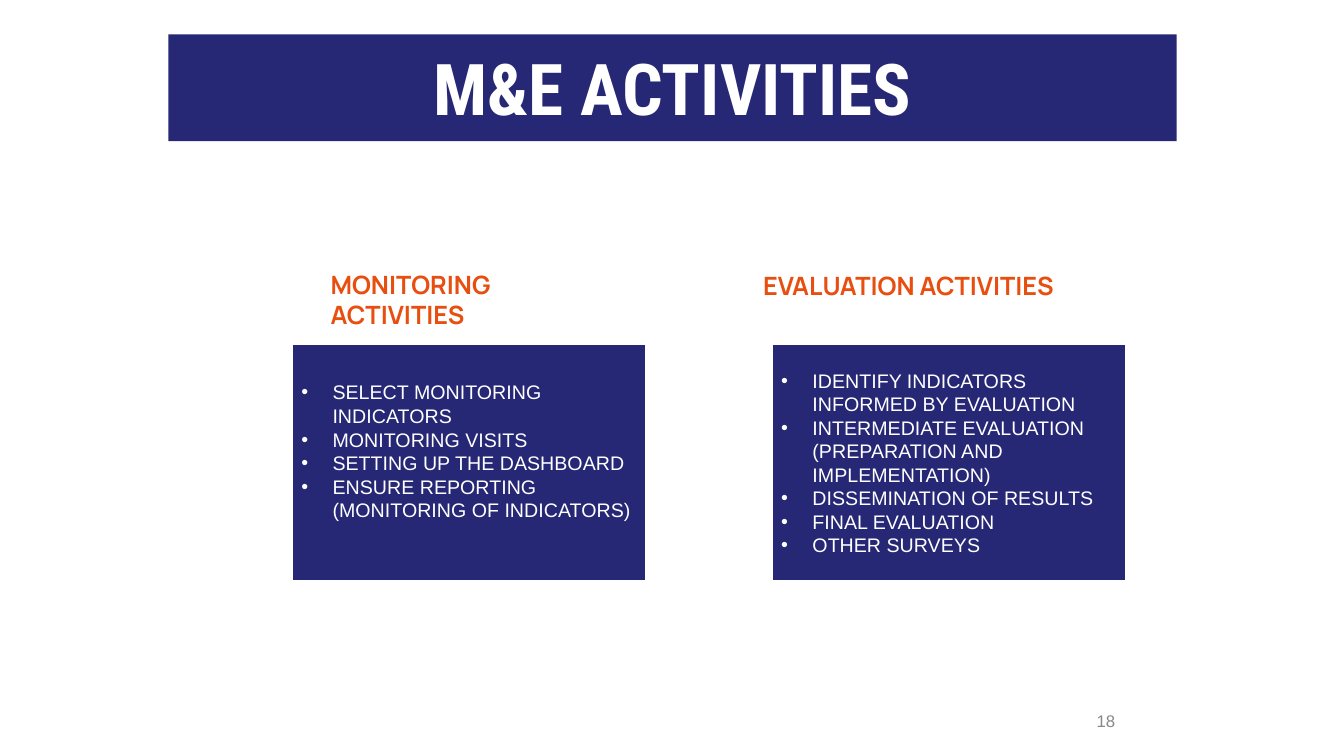
from pptx import Presentation
from pptx.dml.color import RGBColor
from pptx.enum import shapes, text
from pptx.oxml.ns import qn
from pptx.util import Inches, Pt
from lxml import etree

# Content
TITLE = "M&E ACTIVITIES"
PAGE = "18"
COLUMNS = [
    {"heading": "MONITORING ACTIVITIES", "heading_at": (3.18, 2.57, 3, 0.81),
     "bottom_inset": 0.28,
     "items": ["SELECT MONITORING INDICATORS", "MONITORING VISITS",
               "SETTING UP THE DASHBOARD",
               "ENSURE REPORTING (MONITORING OF INDICATORS)"]},
    {"heading": "EVALUATION ACTIVITIES", "heading_at": (7.47, 2.58, 3.15, 0.81),
     "bottom_inset": 0.05,
     "items": ["IDENTIFY INDICATORS INFORMED BY EVALUATION",
               "INTERMEDIATE EVALUATION (PREPARATION AND IMPLEMENTATION)",
               "DISSEMINATION OF RESULTS", "FINAL EVALUATION", "OTHER SURVEYS"]},
]

# Style
COLORS = {"navy": "262775", "orange": "E84E0F", "white": "FFFFFF", "grey": "888888"}
FORMATS = {
    "title": ({"name": "Roboto Condensed", "size": Pt(51), "bold": True}, "white"),
    "heading": ({"name": "Manrope", "size": Pt(18), "bold": True}, "orange"),
    "item": ({"name": "Arial", "size": Pt(14), "bold": False}, "white"),
    "page": ({"name": "Arial", "size": Pt(12), "bold": False}, "grey"),
}
CARD_LEFT, CARD_TOP, CARD_W, CARD_H, CARD_STEP = 2.89, 3.41, 3.52, 2.36, 4.76
INDENT = 0.31


def rgb(name):
    return RGBColor.from_string(COLORS[name])


def set_frame(sp, anchor, top=0.1, bottom=0.1):
    values = {"word_wrap": True, "auto_size": text.MSO_AUTO_SIZE.NONE,
              "vertical_anchor": anchor,
              "margin_left": Inches(0.1), "margin_right": Inches(0.1),
              "margin_top": Inches(top), "margin_bottom": Inches(bottom)}
    for key, value in values.items():
        setattr(sp.text_frame, key, value)
    return sp.text_frame


def write(p, words, style, align):
    p.alignment = align
    r = p.add_run()
    r.text = words
    values, color = FORMATS[style]
    for key, value in values.items():
        setattr(r.font, key, value)
    r.font.color.rgb = rgb(color)


def add_bullet(p):
    pPr = p._p.get_or_add_pPr()
    pPr.set("marL", str(Inches(INDENT)))
    pPr.set("indent", str(-Inches(INDENT)))
    color = etree.SubElement(pPr, qn("a:buClr"))
    etree.SubElement(color, qn("a:srgbClr"), val=COLORS["white"])
    etree.SubElement(pPr, qn("a:buFont"), typeface="Arial")
    etree.SubElement(pPr, qn("a:buChar"), char="•")


def add_label(s, at, words, style, align, anchor, inset):
    sp = s.shapes.add_textbox(*map(Inches, at))
    tf = set_frame(sp, anchor, inset, inset)
    write(tf.paragraphs[0], words, style, align)


def add_card(s, left, items, bottom_inset):
    box = map(Inches, (left, CARD_TOP, CARD_W, CARD_H))
    sp = s.shapes.add_shape(shapes.MSO_SHAPE.RECTANGLE, *box)
    sp.shadow.inherit = False
    sp.fill.solid()
    sp.fill.fore_color.rgb = rgb("navy")
    sp.line.color.rgb = rgb("white")
    sp.line.width = Pt(2)
    tf = set_frame(sp, text.MSO_ANCHOR.MIDDLE, 0.05, bottom_inset)
    for i, item in enumerate(items):
        p = tf.add_paragraph() if i else tf.paragraphs[0]
        write(p, item, "item", text.PP_ALIGN.LEFT)
        add_bullet(p)


def main():
    prs = Presentation()
    prs.slide_width, prs.slide_height = Inches(13.33), Inches(7.5)
    s = prs.slides.add_slide(prs.slide_layouts[5])

    # Title band
    title = s.shapes.title
    title.left, title.top, title.width, title.height = map(Inches, (1.67, 0.34, 10, 1.06))
    title.fill.solid()
    title.fill.fore_color.rgb = rgb("navy")
    tf = set_frame(title, text.MSO_ANCHOR.TOP)
    write(tf.paragraphs[0], TITLE, "title", text.PP_ALIGN.CENTER)

    # Headings and cards
    for i, column in enumerate(COLUMNS):
        add_label(s, column["heading_at"], column["heading"], "heading",
                  text.PP_ALIGN.LEFT, text.MSO_ANCHOR.TOP, 0.1)
        add_card(s, CARD_LEFT + i * CARD_STEP, column["items"], column["bottom_inset"])

    # Page number
    add_label(s, (8.83, 6.95, 2.33, 0.4), PAGE, "page",
              text.PP_ALIGN.RIGHT, text.MSO_ANCHOR.MIDDLE, 0.05)

    prs.save("out.pptx")


if __name__ == "__main__":
    main()
